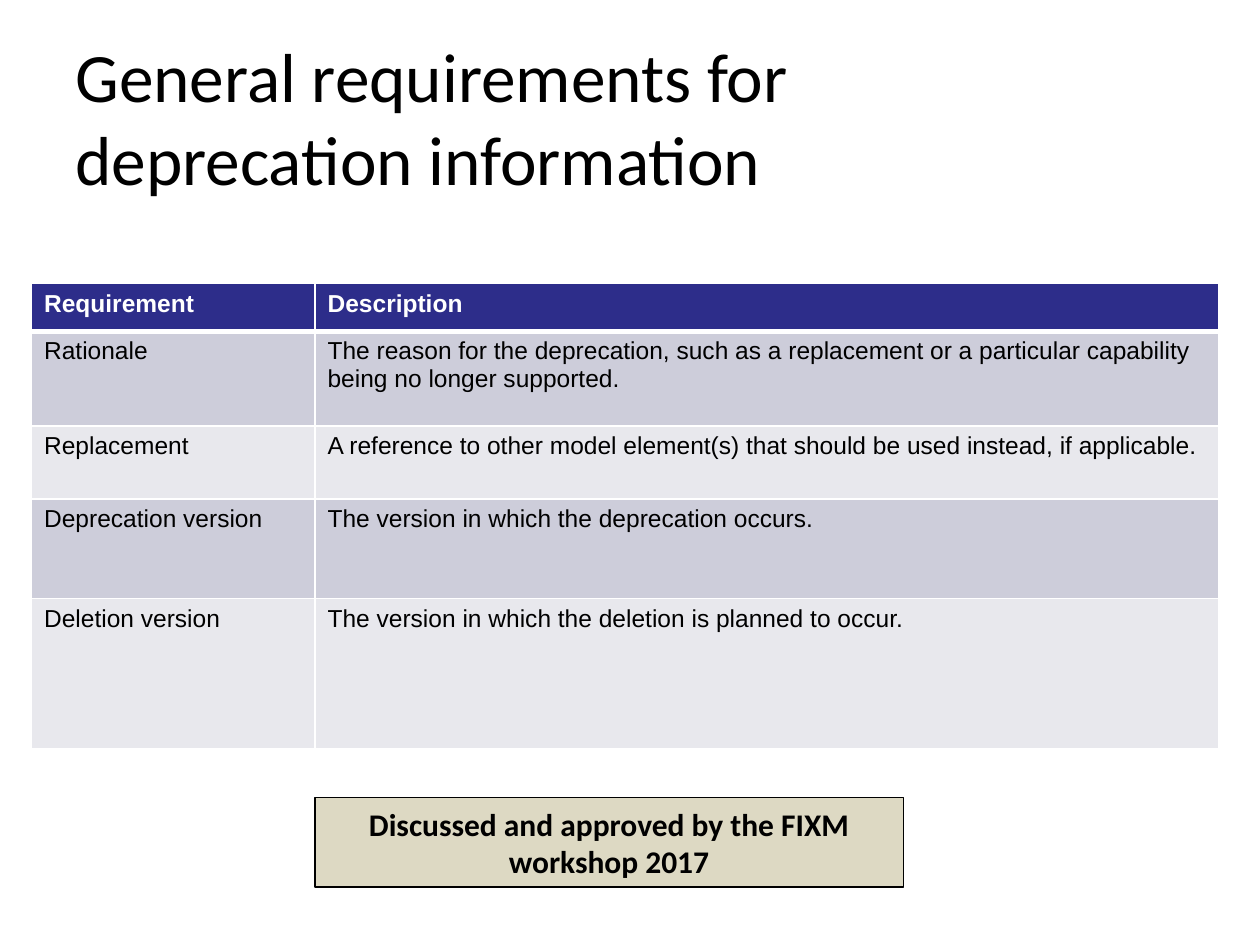
from lxml import etree
from pptx import Presentation
from pptx.dml.color import RGBColor
from pptx.enum.shapes import MSO_SHAPE
from pptx.enum.text import MSO_ANCHOR, PP_ALIGN
from pptx.oxml.ns import qn
from pptx.util import Inches, Pt

RECTANGLE = MSO_SHAPE.RECTANGLE
MIDDLE = MSO_ANCHOR.MIDDLE
LEFT, CENTER = PP_ALIGN.LEFT, PP_ALIGN.CENTER

BLACK = RGBColor(0x00, 0x00, 0x00)
WHITE = RGBColor(0xFF, 0xFF, 0xFF)
NAVY = RGBColor(0x2D, 0x2D, 0x8A)
TAN = RGBColor(0xDD, 0xD9, 0xC3)
BANDS = (RGBColor(0xCD, 0xCD, 0xDA), RGBColor(0xE8, 0xE8, 0xED))

# Content
TITLE = "General requirements for deprecation information"
REQUIREMENTS = [
    ("Requirement", "Description"),
    ("Rationale", "The reason for the deprecation, such as a replacement or a "
                  "particular capability being no longer supported."),
    ("Replacement", "A reference to other model element(s) that should be used "
                    "instead, if applicable."),
    ("Deprecation version", "The version in which the deprecation occurs."),
    ("Deletion version", "The version in which the deletion is planned to occur."),
]
APPROVAL = "Discussed and approved by the FIXM workshop 2017"

# Layout in inches
TITLE_BOX = (0.5, 0.3, 7.08, 1.25)
TABLE_LEFT, TABLE_TOP = 0.25, 2.25
COLUMN_WIDTHS = (2.25, 7.17)
ROW_HEIGHTS = (0.38, 0.75, 0.58, 0.79, 1.19)
APPROVAL_BOX = (2.5, 6.33, 4.67, 0.71)

# Text formats
TITLE_FONT = {"name": "Calibri", "size": Pt(39.6), "bold": False}
HEADER_FONT = {"name": "Arial", "size": Pt(14), "bold": True}
BODY_FONT = {**HEADER_FONT, "bold": False}
APPROVAL_FONT = {"name": "Calibri", "size": Pt(18), "bold": True}


def write(frame, text, font_format, color, align=LEFT):
    paragraph = frame.paragraphs[0]
    paragraph.alignment = align
    run = paragraph.add_run()
    run.text = text
    for attribute, value in font_format.items():
        setattr(run.font, attribute, value)
    run.font.color.rgb = color


def set_borders(cell, widths):
    properties = cell._tc.get_or_add_tcPr()
    for side, points in widths.items():
        line = etree.SubElement(properties, qn(f"a:ln{side}"), w=str(Pt(points)))
        fill = etree.SubElement(line, qn("a:solidFill"))
        etree.SubElement(fill, qn("a:srgbClr"), val=str(WHITE))


presentation = Presentation()
presentation.slide_width = Inches(10)
presentation.slide_height = Inches(7.5)
slide = presentation.slides.add_slide(presentation.slide_layouts[6])

# Requirements table
table = slide.shapes.add_table(
    len(REQUIREMENTS), len(COLUMN_WIDTHS), Inches(TABLE_LEFT), Inches(TABLE_TOP),
    Inches(sum(COLUMN_WIDTHS)), Inches(sum(ROW_HEIGHTS))).table
for column, width in zip(table.columns, COLUMN_WIDTHS):
    column.width = Inches(width)
for row_index, (row, height) in enumerate(zip(table.rows, ROW_HEIGHTS)):
    row.height = Inches(height)
    is_header = row_index == 0
    for cell, text in zip(row.cells, REQUIREMENTS[row_index]):
        set_borders(cell, {"L": 1, "R": 1, "T": 3 if row_index == 1 else 1,
                           "B": 3 if is_header else 1})
        cell.fill.solid()
        cell.fill.fore_color.rgb = NAVY if is_header else BANDS[(row_index - 1) % 2]
        write(cell.text_frame, text, HEADER_FONT if is_header else BODY_FONT,
              WHITE if is_header else BLACK)

# Title
title = slide.shapes.add_textbox(*map(Inches, TITLE_BOX)).text_frame
title.word_wrap = True
title.vertical_anchor = MIDDLE
write(title, TITLE, TITLE_FONT, BLACK)

# Approval note
approval = slide.shapes.add_shape(RECTANGLE, *map(Inches, APPROVAL_BOX))
approval.shadow.inherit = False
approval.fill.solid()
approval.fill.fore_color.rgb = TAN
approval.line.color.rgb = BLACK
approval.line.width = Pt(0.75)
approval.text_frame.word_wrap = True
approval.text_frame.vertical_anchor = MIDDLE
write(approval.text_frame, APPROVAL, APPROVAL_FONT, BLACK, CENTER)

presentation.save("out.pptx")
